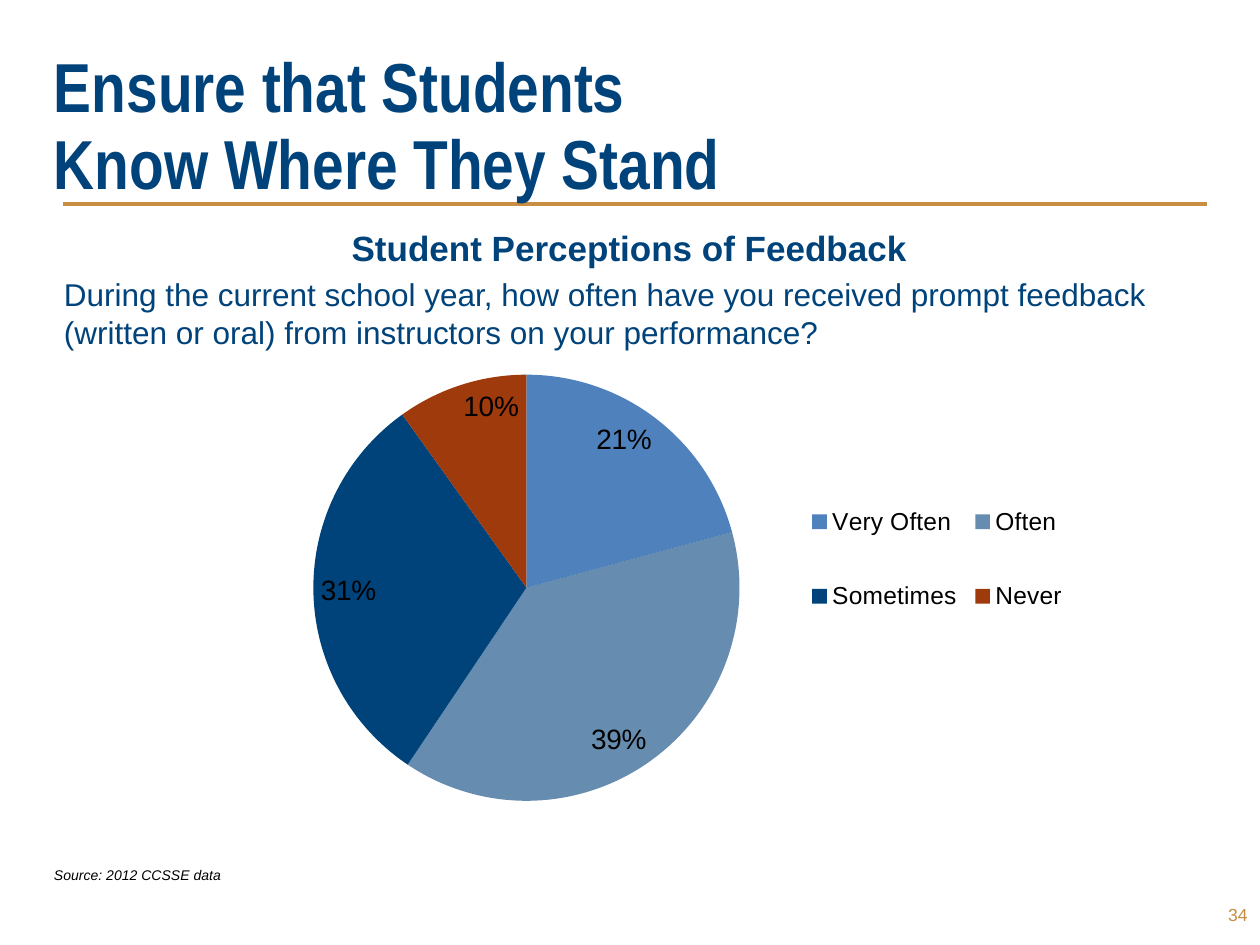
from lxml import etree
from pptx import Presentation
from pptx.chart.data import CategoryChartData
from pptx.dml.color import RGBColor
from pptx.enum.chart import XL_CHART_TYPE, XL_LABEL_POSITION, XL_LEGEND_POSITION
from pptx.enum.shapes import MSO_CONNECTOR
from pptx.enum.text import MSO_ANCHOR, PP_ALIGN
from pptx.oxml import parse_xml
from pptx.oxml.ns import nsdecls, qn
from pptx.util import Inches, Pt

PIE, IN_END = XL_CHART_TYPE.PIE, XL_LABEL_POSITION.INSIDE_END
RIGHT_LEG, LINE = XL_LEGEND_POSITION.RIGHT, MSO_CONNECTOR.STRAIGHT
TOP, MID, LOW = MSO_ANCHOR.TOP, MSO_ANCHOR.MIDDLE, MSO_ANCHOR.BOTTOM
LEFT, MIDDLE, RIGHT = PP_ALIGN.LEFT, PP_ALIGN.CENTER, PP_ALIGN.RIGHT

# Content
COLORS = {"navy": "00427A", "gold": "C78E44", "blue": "4F81BD",
          "rust": "9F3A0D", "black": "000000"}
TITLE = ["Ensure that Students", "Know Where They Stand"]
HEAD = "Student Perceptions of Feedback"
ASK = ("During the current school year, how often have you received prompt "
       "feedback (written or oral) from instructors on your performance?")
SOURCE = "Source: 2012 CCSSE data"
PAGE = "34"
# answer, share, colour, opacity in percent
SLICES = [("Very Often", 0.21, "blue", 100), ("Often", 0.39, "navy", 60),
          ("Sometimes", 0.31, "navy", 100), ("Never", 0.10, "rust", 100)]

# Places in inches: left, top, width, height
TITLE_BOX = (0.33, 0.53, 9.33, 1.13)
BODY_BOX = (0.41, 1.75, 9.17, 1.08)
CHART_BOX = (0.92, 2.33, 8.25, 4.58)
SOURCE_BOX = (0.33, 6.83, 2, 0.24)
PAGE_BOX = (9.33, 7.08, 0.67, 0.35)
RULE = (0.5, 1.62, 9.58, 1.62)
# Shares of the chart: x, y, w, h
PLOT = (0.19, 0.04, 0.41, 0.94)
LEGEND = (0.66, 0.29, 0.26, 0.34)


def rgb(name):
    return RGBColor.from_string(COLORS[name])


def style(font, size, color, bold=False, italic=False, face="Arial"):
    font.name, font.size, font.color.rgb = face, Pt(size), rgb(color)
    font.bold, font.italic = bold, italic


def add_box(slide, place, anchor=TOP):
    frame = slide.shapes.add_textbox(*map(Inches, place)).text_frame
    frame.word_wrap, frame.vertical_anchor = True, anchor
    return frame


def add_run(para, text, size, color, align=LEFT, **look):
    para.alignment = align
    run = para.add_run()
    run.text = text
    style(run.font, size, color, **look)


def layout(shares, inner=False):
    keys = [("xMode", "edge"), ("yMode", "edge"), *zip("xywh", shares)]
    if inner:
        keys.insert(0, ("layoutTarget", "inner"))
    body = "".join(f'<c:{k} val="{v}"/>' for k, v in keys)
    return parse_xml(f'<c:layout {nsdecls("c")}><c:manualLayout>{body}'
                     '</c:manualLayout></c:layout>')


def add_pie(slide):
    data = CategoryChartData(number_format="0%")
    data.categories = [s[0] for s in SLICES]
    data.add_series("Series 1", [s[1] for s in SLICES])
    chart = slide.shapes.add_chart(PIE, *map(Inches, CHART_BOX), data).chart
    style(chart.font, 18, "black")
    chart.has_title = False

    # Slices
    plot = chart.plots[0]
    plot.vary_by_categories = True
    for i, (_, _, color, alpha) in enumerate(SLICES):
        fill = plot.series[0].points[i].format.fill
        fill.solid()
        fill.fore_color.rgb = rgb(color)
        if alpha < 100:
            tint = plot.series[0].points[i].format.fill._xPr.find(
                ".//" + qn("a:srgbClr"))
            etree.SubElement(tint, qn("a:alpha")).set("val", str(alpha * 1000))

    # Labels and legend
    plot.has_data_labels = True
    labels = plot.data_labels
    labels.show_value, labels.position = True, IN_END
    labels.number_format, labels.number_format_is_linked = "0%", False
    style(labels.font, 16, "black")
    chart.has_legend = True
    legend = chart.legend
    legend.position, legend.include_in_layout = RIGHT_LEG, False
    style(legend.font, 14, "black")

    # Fixed places for pie and legend
    area = chart._chartSpace.find(".//" + qn("c:plotArea"))
    for old in area.findall(qn("c:layout")):
        area.remove(old)
    area.insert(0, layout(PLOT, inner=True))
    key = legend._element
    for old in key.findall(qn("c:layout")):
        key.remove(old)
    key.find(qn("c:legendPos")).addnext(layout(LEGEND))


def main():
    deck = Presentation()
    deck.slide_width, deck.slide_height = Inches(10), Inches(7.5)
    slide = deck.slides.add_slide(deck.slide_layouts[6])

    # Rule under the title
    rule = slide.shapes.add_connector(LINE, *map(Inches, RULE))
    rule.line.color.rgb, rule.line.width = rgb("gold"), Pt(2.25)
    etree.SubElement(rule._element.spPr, qn("a:effectLst"))

    # Title
    para = add_box(slide, TITLE_BOX, LOW).paragraphs[0]
    para.line_spacing = Pt(44)
    for i, text in enumerate(TITLE):
        if i:
            para.add_line_break()
        add_run(para, text, 39.6, "navy", bold=True, face="Arial Narrow")

    # Page number and source
    add_run(add_box(slide, PAGE_BOX, MID).paragraphs[0], PAGE, 10, "gold", RIGHT)
    add_run(add_box(slide, SOURCE_BOX).paragraphs[0], SOURCE, 8, "black",
            italic=True)

    add_pie(slide)

    # Heading and question
    body = add_box(slide, BODY_BOX)
    add_run(body.paragraphs[0], HEAD, 20, "navy", MIDDLE, bold=True)
    para = body.add_paragraph()
    para.space_before = Pt(3.6)
    add_run(para, ASK, 18, "navy")

    deck.save("out.pptx")


if __name__ == "__main__":
    main()
